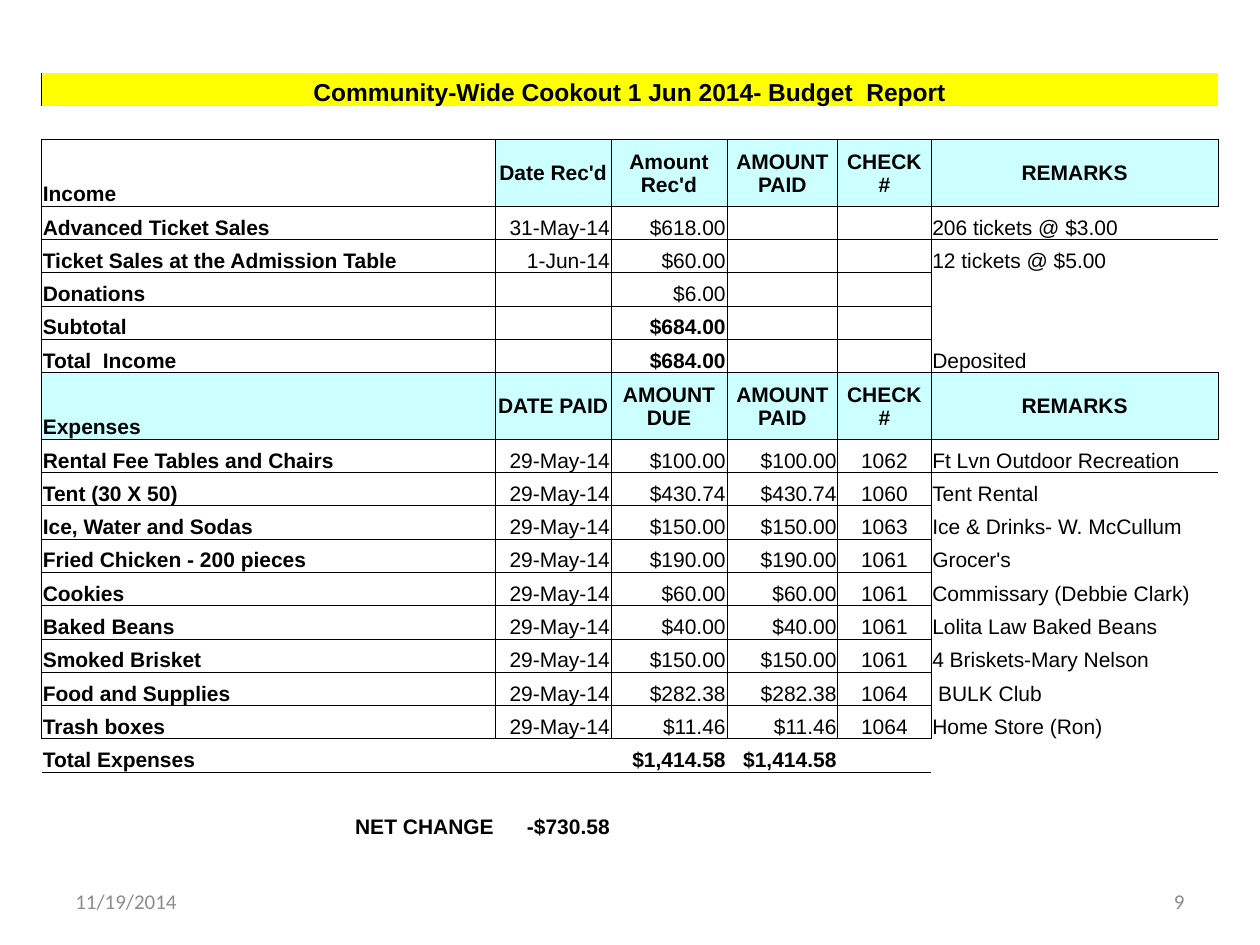
from lxml.etree import SubElement
from pptx import Presentation
from pptx.dml.color import RGBColor
from pptx.enum.text import MSO_ANCHOR, PP_ALIGN
from pptx.oxml.ns import qn
from pptx.util import Inches, Pt


def format_text(text_frame, font_name, size, color, bold, alignment):
    paragraph = text_frame.paragraphs[0]
    paragraph.alignment = alignment
    for run in paragraph.runs:
        run.font.name = font_name
        run.font.size = Pt(size)
        run.font.bold = bold
        run.font.color.rgb = RGBColor.from_string(color)
    if not paragraph.runs:
        SubElement(paragraph._p, qn("a:endParaRPr"), sz=str(size * 100))


def add_border(cell, side, width):
    line = SubElement(cell._tc.get_or_add_tcPr(), qn("a:ln" + side), w=str(Pt(width)))
    fill = SubElement(line, qn("a:solidFill"))
    SubElement(fill, qn("a:srgbClr"), val="000000")


LEFT, CENTER, RIGHT = PP_ALIGN.LEFT, PP_ALIGN.CENTER, PP_ALIGN.RIGHT
BLANK = [""] * 6
TITLE_ROW, INCOME_ROW, EXPENSES_ROW, TOTAL_ROW, NET_ROW = 0, 2, 8, 18, 20
HEADER_ROWS = (INCOME_ROW, EXPENSES_ROW)
SUM_ROWS = (6, 7, TOTAL_ROW, NET_ROW)
REMARKS = 5

budget = [
    ["Community-Wide Cookout 1 Jun 2014- Budget  Report"] + [""] * 5,
    BLANK,
    ["Income", "Date Rec'd", "Amount Rec'd", "AMOUNT PAID", "CHECK #", "REMARKS"],
    ["Advanced Ticket Sales", "31-May-14", "$618.00", "", "", "206 tickets @ $3.00"],
    ["Ticket Sales at the Admission Table", "1-Jun-14", "$60.00", "", "", "12 tickets @ $5.00"],
    ["Donations", "", "$6.00", "", "", ""],
    ["Subtotal", "", "$684.00", "", "", ""],
    ["Total  Income", "", "$684.00", "", "", "Deposited"],
    ["Expenses", "DATE PAID", "AMOUNT DUE", "AMOUNT PAID", "CHECK #", "REMARKS"],
]
expenses = [
    ("Rental Fee Tables and Chairs", "$100.00", "1062", "Ft Lvn Outdoor Recreation"),
    ("Tent (30 X 50)", "$430.74", "1060", "Tent Rental"),
    ("Ice, Water and Sodas", "$150.00", "1063", "Ice & Drinks- W. McCullum"),
    ("Fried Chicken - 200 pieces", "$190.00", "1061", "Grocer's"),
    ("Cookies", "$60.00", "1061", "Commissary (Debbie Clark)"),
    ("Baked Beans", "$40.00", "1061", "Lolita Law Baked Beans"),
    ("Smoked Brisket", "$150.00", "1061", "4 Briskets-Mary Nelson"),
    ("Food and Supplies", "$282.38", "1064", " BULK Club"),
    ("Trash boxes", "$11.46", "1064", "Home Store (Ron)"),
]
for item, amount, check, remark in expenses:
    budget.append([item, "29-May-14", amount, amount, check, remark])
budget += [
    ["Total Expenses", "", "$1,414.58", "$1,414.58", "", ""],
    BLANK,
    ["NET CHANGE", "-$730.58", "", "", "", ""],
]

presentation = Presentation()
presentation.slide_width = Inches(10)
presentation.slide_height = Inches(7.5)
slide = presentation.slides.add_slide(presentation.slide_layouts[6])

for text, left, alignment in (("11/19/2014", 0.5, LEFT), ("9", 7.17, RIGHT)):
    footer = slide.shapes.add_textbox(Inches(left), Inches(6.95), Inches(2.33), Inches(0.4))
    footer.text_frame.text = text
    footer.text_frame.word_wrap = True
    footer.text_frame.vertical_anchor = MSO_ANCHOR.MIDDLE
    format_text(footer.text_frame, "Calibri", 12, "8C8C8C", False, alignment)

column_widths = [3.6, 0.92, 0.92, 0.88, 0.74, 2.28]
column_alignments = [LEFT, RIGHT, RIGHT, RIGHT, CENTER, LEFT]
table_height = Inches(6.08)
row_height = table_height // (len(budget) + len(HEADER_ROWS))

frame = slide.shapes.add_table(
    len(budget), len(column_widths), Inches(0.33), Inches(0.58),
    Inches(sum(column_widths)), table_height)
table = frame.table
table.first_row = table.horz_banding = False
style = table._tbl.tblPr.find(qn("a:tableStyleId"))
style.text = "{2D5ABB26-0587-4C30-8999-92F81FD0307C}"
for column, width in zip(table.columns, column_widths):
    column.width = Inches(width)

for row, values in enumerate(budget):
    is_title, is_header = row == TITLE_ROW, row in HEADER_ROWS
    table.rows[row].height = row_height * (2 if is_header else 1)
    for column, value in enumerate(values):
        cell = table.cell(row, column)
        cell.margin_left = cell.margin_right = cell.margin_top = Inches(0.01)
        cell.margin_bottom = 0
        centered = is_title or (is_header and column > 0)
        cell.vertical_anchor = MSO_ANCHOR.MIDDLE if is_header and column else MSO_ANCHOR.BOTTOM

        alignment = CENTER if centered else column_alignments[column]
        if row == NET_ROW and column == 0:
            alignment = RIGHT
        bold = is_title or is_header or column == 0 or (row in SUM_ROWS and column < REMARKS)
        cell.text_frame.text = value
        format_text(cell.text_frame, "Arial", 14 if is_title else 12, "000000", bold, alignment)

        sides = ""
        if is_title and column == 0:
            sides = "L"
        elif row == INCOME_ROW - 1:
            sides = "B"
        elif INCOME_ROW <= row < TOTAL_ROW:
            sides = "LRTB" if column < REMARKS or is_header else "L"
            if column == REMARKS and row - 1 in HEADER_ROWS:
                sides = "LT"
            elif column == REMARKS and row + 1 == EXPENSES_ROW:
                sides = "LB"
        elif row == TOTAL_ROW and column < REMARKS:
            sides = "T"
        for side in sides:
            thick = side == "L" and column == 0 and row in (TITLE_ROW, EXPENSES_ROW)
            add_border(cell, side, 1 if thick else 0.5)

        if is_title or row == EXPENSES_ROW or (is_header and column > 0):
            cell.fill.solid()
            cell.fill.fore_color.rgb = RGBColor.from_string("FFFF00" if is_title else "CCFFFF")
        else:
            cell.fill.background()

table.cell(TITLE_ROW, 0).merge(table.cell(TITLE_ROW, REMARKS))

presentation.save("out.pptx")
